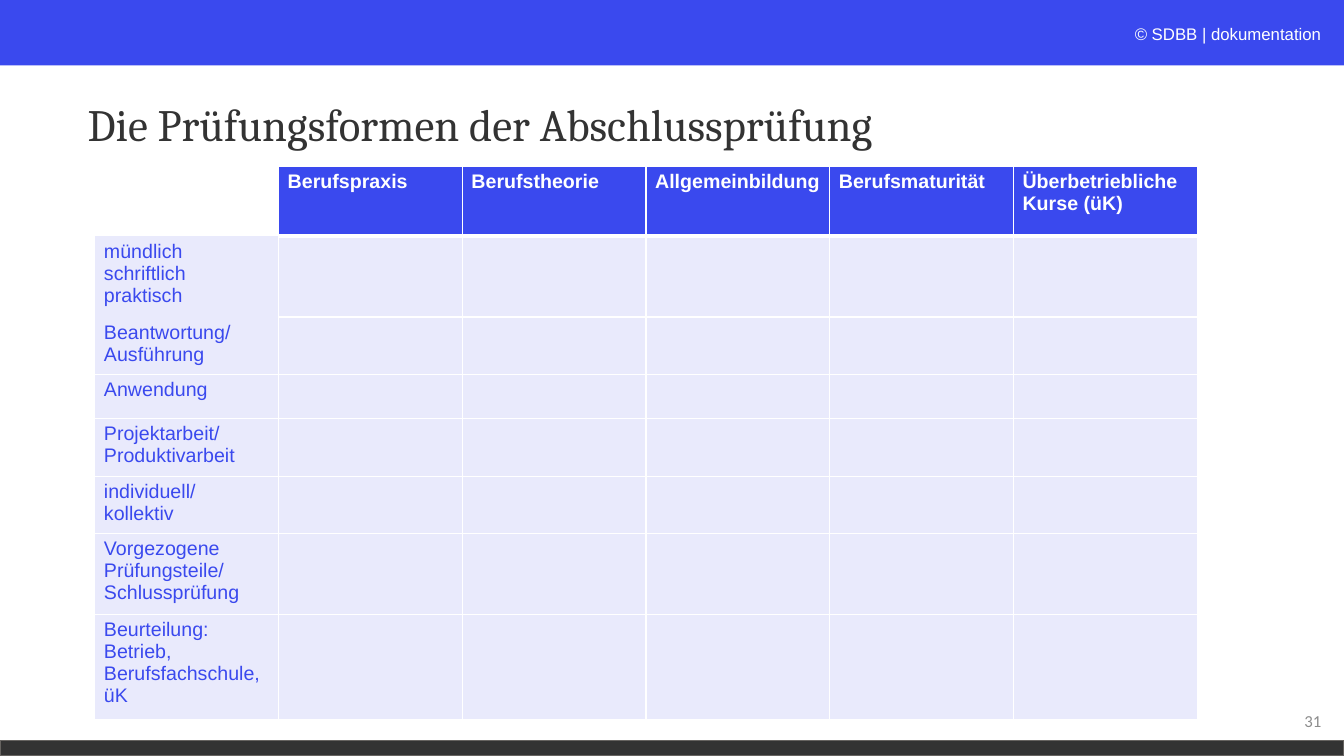
from lxml.etree import SubElement
from pptx import Presentation
from pptx.dml.color import RGBColor
from pptx.enum.shapes import MSO_SHAPE as Shape
from pptx.enum.text import MSO_ANCHOR as Anchor, PP_ALIGN as Align
from pptx.oxml.ns import qn
from pptx.util import Cm, Pt

COLORS = {
    "blue": "3A49EE", "pale": "E9EAFC", "dark": "333333", "edge": "666360",
    "white": "FFFFFF", "soft_white": "FCFDFE", "gray": "8C8C8C",
}
TITLE = "Die Prüfungsformen der Abschlussprüfung"
COPYRIGHT = [("© ", "soft_white", True), ("SDBB | dokumentation", "white", False)]
PAGE_NUMBER = "31"
SUBJECTS = ["Berufspraxis", "Berufstheorie", "Allgemeinbildung",
            "Berufsmaturität", "Überbetriebliche Kurse (üK)"]
# Lines of each row label, row height in cm
EXAM_FORMS = [
    (["mündlich", "schriftlich", "praktisch"], 2.04),
    (["Beantwortung/", "Ausführung"], 1.45),
    (["Anwendung"], 1.11),
    (["Projektarbeit/", "Produktivarbeit"], 1.45),
    (["individuell/", "kollektiv"], 1.45),
    (["Vorgezogene", "Prüfungsteile/", "Schlussprüfung"], 2.04),
    (["Beurteilung:", "Betrieb,", "Berufsfachschule,", "üK"], 2.65),
]
HEADER_HEIGHT, COLUMN_WIDTH = 1.75, 4.63
PAGE_WIDTH, PAGE_HEIGHT = 33.87, 19.05


def rgb(name):
    return RGBColor.from_string(COLORS[name])


def style(span, font, size, color, bold=False, italic=False):
    span.font.name, span.font.size = font, Pt(size)
    span.font.bold, span.font.italic = bold, italic
    span.font.color.rgb = rgb(color)


def add_bar(top, height, color, edge=None):
    bar = page.shapes.add_shape(Shape.RECTANGLE, 0, Cm(top), Cm(PAGE_WIDTH), Cm(height))
    bar.shadow.inherit = False
    bar.fill.solid()
    bar.fill.fore_color.rgb = rgb(color)
    if edge:
        bar.line.color.rgb = rgb(edge)
        bar.line.width = Pt(1)
    else:
        bar.line.fill.background()


def add_box(left, top, width, height, anchor, align):
    box = page.shapes.add_textbox(Cm(left), Cm(top), Cm(width), Cm(height))
    box.text_frame.word_wrap = True
    box.text_frame.vertical_anchor = anchor
    para = box.text_frame.paragraphs[0]
    para.alignment = align
    return para


def set_borders(cell, widths):
    """Widths in points for left, right, top, bottom; 0 means no line."""
    properties = cell._tc.get_or_add_tcPr()
    for position, (side, width) in enumerate(zip("LRTB", widths)):
        line = SubElement(properties, qn(f"a:ln{side}"), w=str(Pt(width)))
        properties.remove(line)
        properties.insert(position, line)
        if width:
            fill = SubElement(line, qn("a:solidFill"))
            SubElement(fill, qn("a:srgbClr"), val=COLORS["white"])
        else:
            SubElement(line, qn("a:noFill"))


deck = Presentation()
deck.slide_width, deck.slide_height = Cm(PAGE_WIDTH), Cm(PAGE_HEIGHT)
page = deck.slides.add_slide(deck.slide_layouts[6])

# Bars at the top and bottom
add_bar(0, 1.65, "blue")
add_bar(18.66, 0.39, "dark", "edge")

# Copyright, title and page number
para = add_box(21.89, 0.48, 11.66, 0.77, Anchor.TOP, Align.RIGHT)
for text, color, italic in COPYRIGHT:
    span = para.add_run()
    span.text = text
    style(span, "Arial", 12, color, italic=italic)

para = add_box(1.96, 1.35, 30.76, 3.68, Anchor.MIDDLE, Align.LEFT)
para.text = TITLE
para.line_spacing = 0.9
style(para.runs[0], "Cambria", 32, "dark")

para = add_box(25.93, 17.65, 7.62, 1.02, Anchor.MIDDLE, Align.RIGHT)
para.text = PAGE_NUMBER
style(para.runs[0], "Calibri", 12, "gray")

# Table of exam forms by subject
heights = [HEADER_HEIGHT] + [height for _, height in EXAM_FORMS]
columns = len(SUBJECTS) + 1
grid = [[""] + SUBJECTS]
grid += [["\v".join(lines)] + [""] * len(SUBJECTS) for lines, _ in EXAM_FORMS]
table = page.shapes.add_table(len(grid), columns, Cm(2.39), Cm(4.2),
                              Cm(COLUMN_WIDTH * columns), Cm(sum(heights))).table
table.first_row = table.horz_banding = False
for column in table.columns:
    column.width = Cm(COLUMN_WIDTH)
for row, height in zip(table.rows, heights):
    row.height = Cm(height)

for r, texts in enumerate(grid):
    for c, text in enumerate(texts):
        cell = table.cell(r, c)
        cell.margin_left = cell.margin_right = Cm(0.23)
        cell.margin_top = cell.margin_bottom = Cm(0.11)
        para = cell.text_frame.paragraphs[0]
        para.text = text
        para.font.size = Pt(14)
        for span in para.runs:
            style(span, "Arial", 14, "blue" if r else "white", bold=r == 0)
        if r == c == 0:
            cell.fill.background()
            set_borders(cell, (0, 0, 0, 0))
            continue
        cell.fill.solid()
        cell.fill.fore_color.rgb = rgb("pale" if r else "blue")
        # The first two row labels form one block without a line between
        top = 3 if r == 1 and c else 0 if c == 0 and r <= 2 else 1
        bottom = 3 if r == 0 else 0 if (r, c) == (1, 0) else 1
        set_borders(cell, (1, 1, top, bottom))

deck.save("out.pptx")
